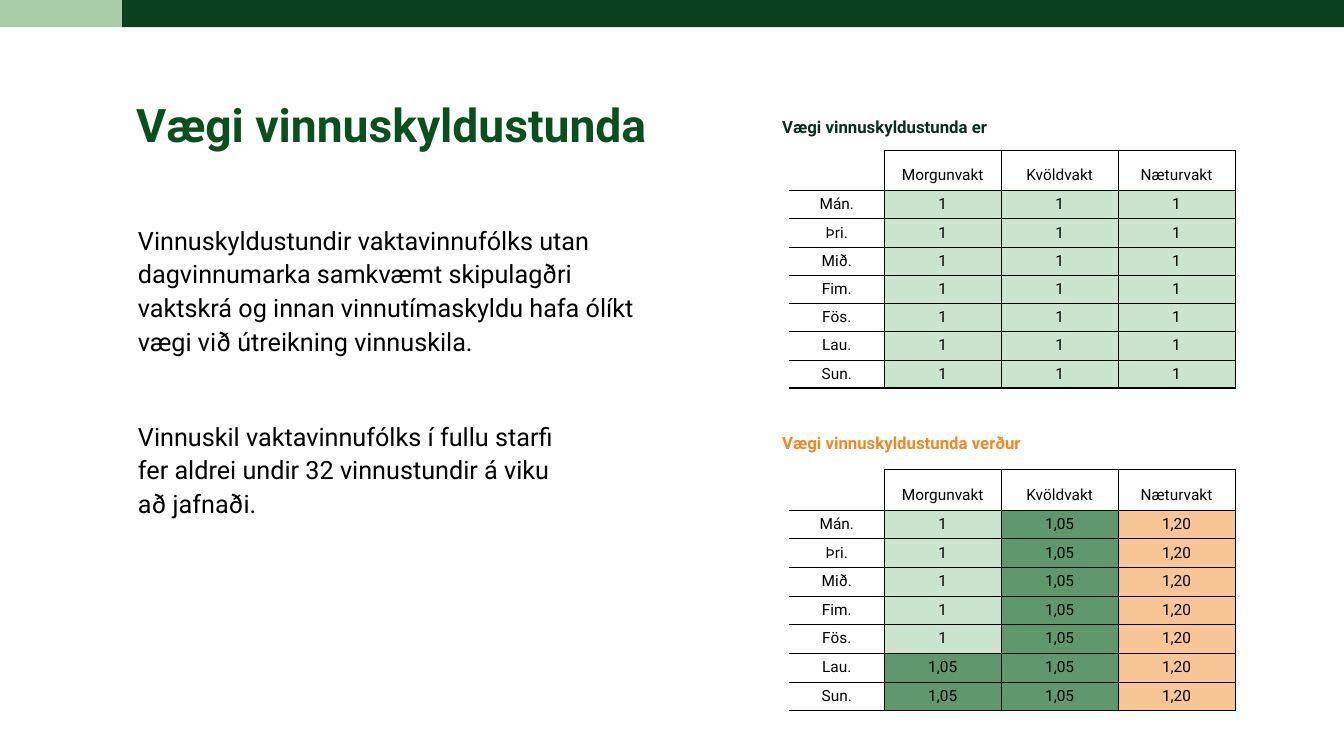
from lxml.etree import SubElement
from pptx import Presentation
from pptx.dml.color import RGBColor
from pptx.enum.shapes import MSO_SHAPE
from pptx.enum.text import MSO_ANCHOR, MSO_AUTO_SIZE, PP_ALIGN
from pptx.oxml.ns import qn
from pptx.util import Inches, Pt

BLACK = "000000"
WEIGHT_FILLS = {"1": "CBE4CE", "1,05": "60986E", "1,20": "F8C694"}
SHIFTS = ["Morgunvakt", "Kvöldvakt", "Næturvakt"]
DAYS = ["Mán.", "Þri.", "Mið.", "Fim.", "Fös.", "Lau.", "Sun."]
WEIGHTS_NOW = [["1", "1", "1"]] * 7
WEIGHTS_NEXT = [["1", "1,05", "1,20"]] * 5 + [["1,05", "1,05", "1,20"]] * 2
HEADER_HEIGHT = 0.4
COLUMN_WIDTHS = [0.94, 1.16, 1.16, 1.16]


def rgb(value):
    return RGBColor.from_string(value)


def write(tf, *texts, size=18, color=BLACK, bold=False, align=PP_ALIGN.LEFT,
          spacing=None, gap=0):
    """Write one paragraph per text, with gap points between paragraphs."""
    for i, text in enumerate(texts):
        p = tf.add_paragraph() if i else tf.paragraphs[0]
        p.text = text
        p.alignment = align
        p.line_spacing = spacing
        p.space_before = Pt(gap if i else 0)
        for font in [p.font] + [r.font for r in p.runs]:
            font.name = "Roboto"
            font.size = Pt(size)
            font.bold = bold
            font.color.rgb = rgb(color)


def place_frame(sp, x, y, w, h):
    sp.left, sp.top, sp.width, sp.height = map(Inches, (x, y, w, h))
    tf = sp.text_frame
    tf.word_wrap = True
    tf.auto_size = MSO_AUTO_SIZE.NONE
    tf.vertical_anchor = MSO_ANCHOR.TOP
    return tf


def add_text(s, box, *texts, **style):
    sp = s.shapes.add_textbox(*map(Inches, box))
    write(place_frame(sp, *box), *texts, **style)


def add_bar(s, x, w, color):
    sp = s.shapes.add_shape(MSO_SHAPE.RECTANGLE, Inches(x), 0, Inches(w), Inches(0.27))
    sp.shadow.inherit = False
    sp.fill.solid()
    sp.fill.fore_color.rgb = rgb(color)
    sp.line.fill.background()


def set_borders(cell, widths):
    """Draw left, right, top and bottom borders; a width of 0 leaves one out."""
    tc_pr = cell._tc.get_or_add_tcPr()
    for side, width in zip("LRTB", widths):
        ln = SubElement(tc_pr, qn(f"a:ln{side}"), w=str(Pt(width)))
        if width:
            fill = SubElement(ln, qn("a:solidFill"))
            SubElement(fill, qn("a:srgbClr"), val=BLACK)
        else:
            SubElement(ln, qn("a:noFill"))


def format_cell(cell, text, row, col):
    is_header = row == 0
    margin = Inches(0.06 if is_header else 0.05)
    cell.margin_left = cell.margin_right = margin
    cell.margin_top = cell.margin_bottom = margin
    cell.vertical_anchor = MSO_ANCHOR.BOTTOM if is_header else MSO_ANCHOR.TOP
    write(cell.text_frame, text, size=11, align=PP_ALIGN.CENTER,
          spacing=Pt(10) if is_header else None)
    set_borders(cell, [0.5 if col else 0, 0.5, 0.5 if row or col else 0,
                       1 if row == len(DAYS) else 0.5])
    if text in WEIGHT_FILLS:
        cell.fill.solid()
        cell.fill.fore_color.rgb = rgb(WEIGHT_FILLS[text])
    else:
        cell.fill.background()


def add_weight_table(s, y, h, weights):
    rows = [["", *SHIFTS]] + [[day, *values] for day, values in zip(DAYS, weights)]
    table = s.shapes.add_table(len(rows), len(COLUMN_WIDTHS), Inches(7.83), Inches(y),
                               Inches(sum(COLUMN_WIDTHS)), Inches(h)).table
    table.first_row = table.horz_banding = False
    for column, width in zip(table.columns, COLUMN_WIDTHS):
        column.width = Inches(width)
    for i, values in enumerate(rows):
        table.rows[i].height = Inches((h - HEADER_HEIGHT) / len(DAYS) if i else HEADER_HEIGHT)
        for j, text in enumerate(values):
            format_cell(table.cell(i, j), text, i, j)


def main():
    prs = Presentation()
    prs.slide_width, prs.slide_height = Inches(13.33), Inches(7.5)
    s = prs.slides.add_slide(prs.slide_layouts[5])

    add_bar(s, 1.21, 12.12, "09411E")
    add_bar(s, 0, 1.21, "A9CCA9")

    title = place_frame(s.shapes.title, 1.25, 0.97, 5.97, 0.86)
    write(title, "Vægi vinnuskyldustunda", size=33, color="09501E", bold=True, spacing=0.9)
    add_text(s, (1.27, 2.15, 5.29, 5.02),
             "Vinnuskyldustundir vaktavinnufólks utan dagvinnumarka samkvæmt skipulagðri "
             "vaktskrá og innan vinnutímaskyldu hafa ólíkt vægi við útreikning vinnuskila.",
             "Vinnuskil vaktavinnufólks í fullu starfi \vfer aldrei undir 32 vinnustundir "
             "á viku \vað jafnaði.", spacing=Pt(24), gap=44)

    add_text(s, (7.66, 1.11, 2.79, 0.3), "Vægi vinnuskyldustunda er",
             size=12, color="092E1E", bold=True)
    add_weight_table(s, 1.49, 2.36, WEIGHTS_NOW)
    add_text(s, (7.66, 4.24, 3.22, 0.3), "Vægi vinnuskyldustunda verður",
             size=12, color="F18921", bold=True)
    add_weight_table(s, 4.66, 2.39, WEIGHTS_NEXT)

    prs.save("out.pptx")


if __name__ == "__main__":
    main()
